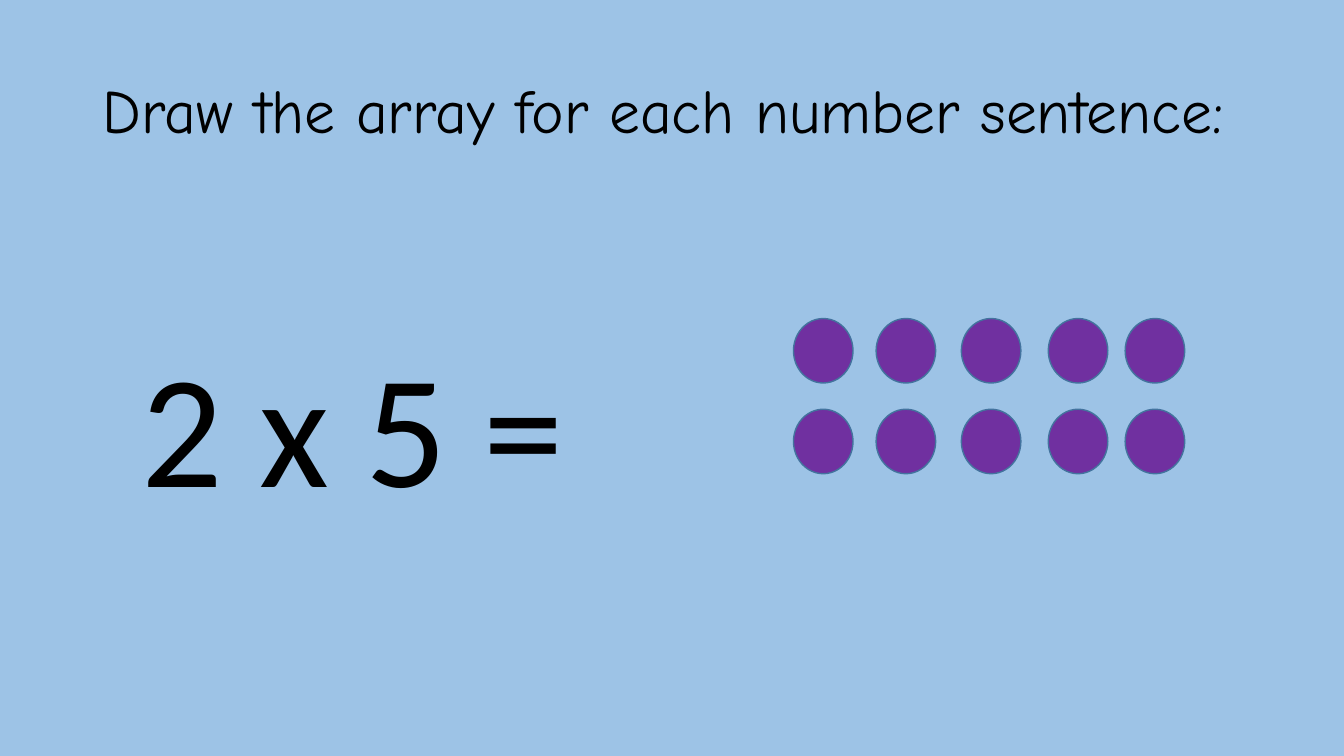
import pptx
import pptx.util
import pptx.dml.color
import pptx.enum.shapes
import pptx.enum.text
import pptx.oxml

SKY = pptx.dml.color.RGBColor(0x9D, 0xC3, 0xE6)
PURPLE = pptx.dml.color.RGBColor(0x70, 0x30, 0xA0)
OUTLINE = pptx.dml.color.RGBColor(0x43, 0x73, 0x9E)
BLACK = pptx.dml.color.RGBColor(0, 0, 0)

SLIDE_W = pptx.util.Inches(13.33)
SLIDE_H = pptx.util.Inches(7.5)

# All places and sizes are percentages of the slide's width or height.
TITLE_BOX = (6.9, 5.33, 86.27, 19.33)
SENTENCE_BOX = (9.75, 45.47, 38.48, 32.8)
COUNTER_COLUMNS = (59.04, 65.19, 71.53, 78, 83.72)
COUNTER_ROWS = (42.13, 54.13)
COUNTER_SIZE = (4.43, 8.53)


def to_emu(left, top, width, height):
    """Turn percentages of the slide into lengths."""
    return (int(SLIDE_W * left / 100), int(SLIDE_H * top / 100),
            int(SLIDE_W * width / 100), int(SLIDE_H * height / 100))


def place(sp, box):
    sp.left, sp.top, sp.width, sp.height = to_emu(*box)


def write(sp, text, *, font, size, anchor, before=0):
    """Fill a placeholder with one left-aligned, unbulleted paragraph."""
    tf = sp.text_frame
    tf.word_wrap = True
    tf.auto_size = pptx.enum.text.MSO_AUTO_SIZE.NONE
    tf.vertical_anchor = anchor
    p = tf.paragraphs[0]
    p.alignment = pptx.enum.text.PP_ALIGN.LEFT
    p.line_spacing = 0.9
    p.space_before = pptx.util.Pt(before)
    pPr = p._p.get_or_add_pPr()
    pPr.set("marL", "0")
    pPr.set("indent", "0")
    pPr.append(pptx.oxml.parse_xml(
        '<a:buNone xmlns:a="http://schemas.openxmlformats.org/drawingml/2006/main"/>'))
    r = p.add_run()
    r.text = text
    r.font.name = font
    r.font.size = pptx.util.Pt(size)
    r.font.color.rgb = BLACK


def add_counter(shapes, column, row):
    sp = shapes.add_shape(pptx.enum.shapes.MSO_SHAPE.FLOWCHART_CONNECTOR,
                          *to_emu(column, row, *COUNTER_SIZE))
    sp.shadow.inherit = False
    sp.fill.solid()
    sp.fill.fore_color.rgb = PURPLE
    sp.line.color.rgb = OUTLINE
    sp.line.width = pptx.util.Pt(1)


def add_array(s):
    group = s.shapes.add_group_shape()
    for row in COUNTER_ROWS:
        for column in COUNTER_COLUMNS:
            add_counter(group.shapes, column, row)


def main():
    prs = pptx.Presentation()
    prs.slide_width, prs.slide_height = SLIDE_W, SLIDE_H
    s = prs.slides.add_slide(prs.slide_layouts[1])
    s.background.fill.solid()
    s.background.fill.fore_color.rgb = SKY

    title, sentence = s.shapes.title, s.placeholders[1]
    place(title, TITLE_BOX)
    write(title, "Draw the array for each number sentence:", font="Comic Neue",
          size=44, anchor=pptx.enum.text.MSO_ANCHOR.MIDDLE)
    place(sentence, SENTENCE_BOX)
    write(sentence, "2 x 5 =", font="Calibri", size=115,
          anchor=pptx.enum.text.MSO_ANCHOR.TOP, before=10)
    add_array(s)
    prs.save("out.pptx")


if __name__ == "__main__":
    main()
